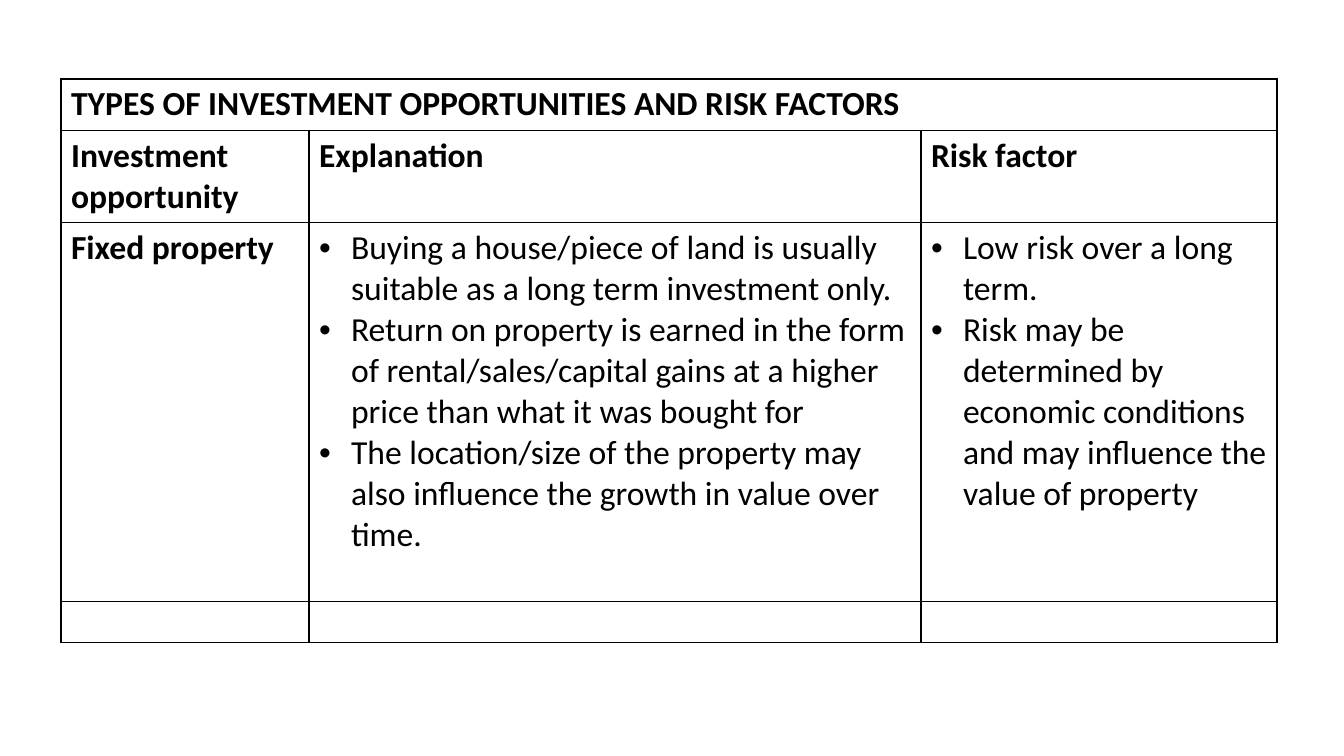
from lxml.etree import SubElement
from pptx import Presentation
from pptx.dml.color import RGBColor
from pptx.oxml.ns import qn
from pptx.util import Pt

TITLE = "TYPES OF INVESTMENT OPPORTUNITIES AND RISK FACTORS"
HEADINGS = ["Investment opportunity", "Explanation", "Risk factor"]
OPPORTUNITY = "Fixed property"
EXPLANATION = [
    "Buying a house/piece of land is usually suitable as a long term investment only.",
    "Return on property is earned in the form of rental/sales/capital gains "
    "at a higher price than what it was bought for",
    "The location/size of the property may also influence the growth in value over time.",
]
RISKS = [
    "Low risk over a long term.",
    "Risk may be determined by economic conditions and may influence the value of property",
]
# A string is a bold label, a list holds bullets, None is an empty cell
ROWS = [
    [TITLE, None, None],
    HEADINGS,
    [OPPORTUNITY, EXPLANATION, RISKS],
    [None, None, None],
]

COLORS = {"ink": "000000", "paper": "FFFFFF"}
FONT, TEXT_SIZE = "Calibri", Pt(24)
BORDER = Pt(1)

SLIDE_W, SLIDE_H = 1344, 756
LEFT, TOP = 61, 79
COL_WIDTHS = [248, 612, 356]
ROW_HEIGHTS = [51, 92, 379, 41]
BULLET_INDENT = 32


def px(n):
    return round(n * 914400 / 100.8)


def add_bullet(paragraph):
    props = paragraph._p.get_or_add_pPr()
    props.set("marL", str(px(BULLET_INDENT)))
    props.set("indent", str(-px(BULLET_INDENT)))
    SubElement(props, qn("a:buFont")).set("typeface", "Arial")
    SubElement(props, qn("a:buChar")).set("char", "•")


def frame_cell(cell):
    """Give the cell four thin borders and a plain fill."""
    props = cell._tc.get_or_add_tcPr()
    for side in ("lnL", "lnR", "lnT", "lnB"):
        line = SubElement(props, qn(f"a:{side}"))
        line.set("w", str(BORDER))
        color = SubElement(SubElement(line, qn("a:solidFill")), qn("a:srgbClr"))
        color.set("val", COLORS["ink"])
    cell.fill.solid()
    cell.fill.fore_color.rgb = RGBColor.from_string(COLORS["paper"])


def write_cell(cell, content):
    bulleted = isinstance(content, list)
    cell.text_frame.text = "\n".join(content) if bulleted else content
    for paragraph in cell.text_frame.paragraphs:
        if bulleted:
            add_bullet(paragraph)
        for run in paragraph.runs:
            run.font.name = FONT
            run.font.size = TEXT_SIZE
            run.font.bold = not bulleted
            run.font.color.rgb = RGBColor.from_string(COLORS["ink"])


def main():
    prs = Presentation()
    prs.slide_width, prs.slide_height = px(SLIDE_W), px(SLIDE_H)
    slide = prs.slides.add_slide(prs.slide_layouts[6])

    table = slide.shapes.add_table(
        len(ROWS), len(COL_WIDTHS), px(LEFT), px(TOP),
        px(sum(COL_WIDTHS)), px(sum(ROW_HEIGHTS))).table
    table.first_row = table.horz_banding = False
    for column, width in zip(table.columns, COL_WIDTHS):
        column.width = px(width)
    for row, height in zip(table.rows, ROW_HEIGHTS):
        row.height = px(height)
    table.cell(0, 0).merge(table.cell(0, len(COL_WIDTHS) - 1))

    for row, contents in zip(table.rows, ROWS):
        for cell, content in zip(row.cells, contents):
            frame_cell(cell)
            if content:
                write_cell(cell, content)

    prs.save("out.pptx")


if __name__ == "__main__":
    main()
